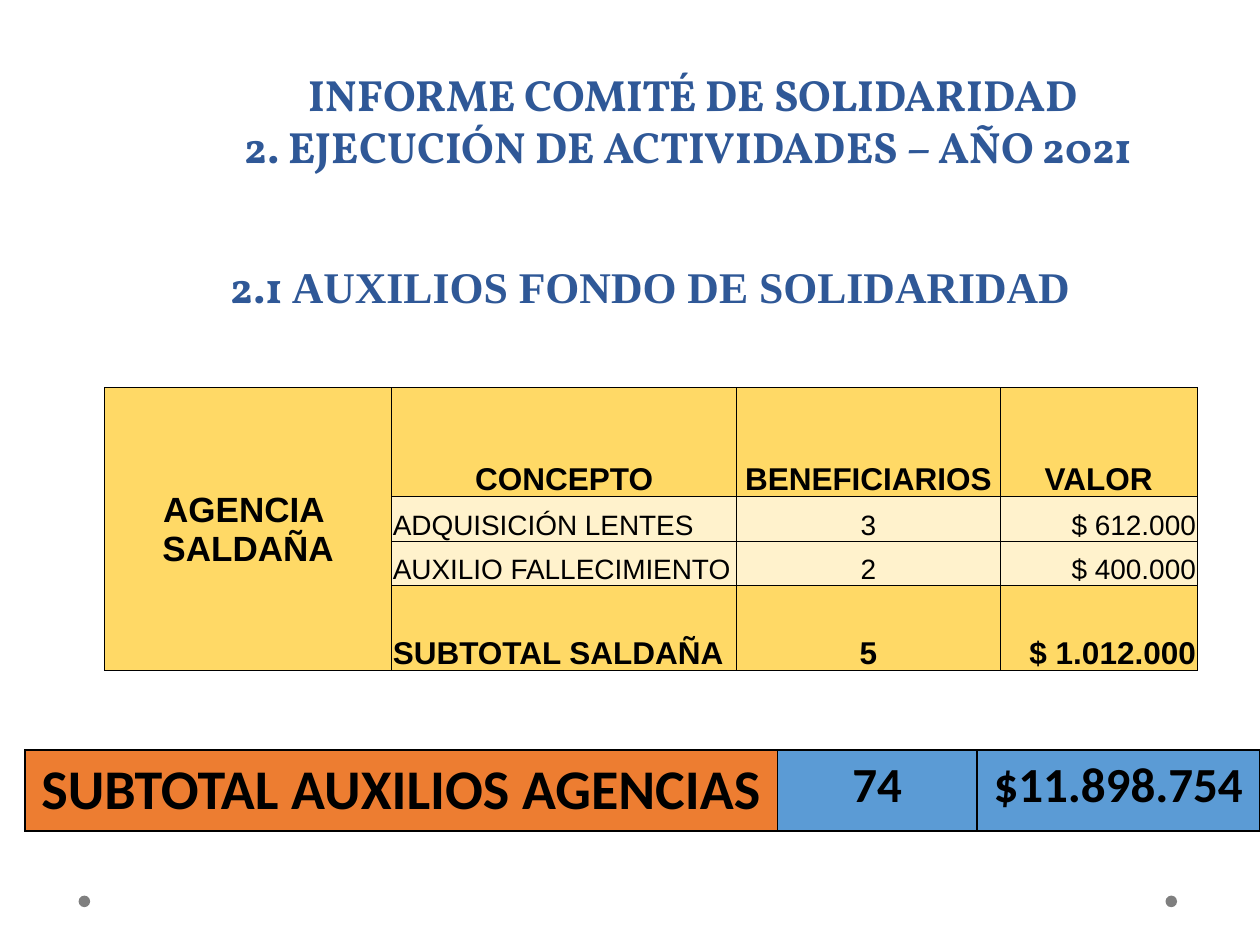
from lxml import etree
from pptx import Presentation
from pptx.dml.color import RGBColor
from pptx.enum.shapes import MSO_SHAPE
from pptx.enum.text import MSO_ANCHOR, PP_ALIGN
from pptx.oxml.ns import qn
from pptx.util import Pt

LEFT, CENTER, RIGHT = PP_ALIGN.LEFT, PP_ALIGN.CENTER, PP_ALIGN.RIGHT
TOP, MIDDLE, BOTTOM = MSO_ANCHOR.TOP, MSO_ANCHOR.MIDDLE, MSO_ANCHOR.BOTTOM
OVAL = MSO_SHAPE.OVAL

COLORS = {
    "heading": "2F5897", "text": "000000", "dot": "7F7F7F",
    "gold": "FFD966", "cream": "FFF2CC", "orange": "ED7D31", "blue": "5B9BD5",
}

TITLE = ["INFORME COMITÉ DE SOLIDARIDAD", "2. EJECUCIÓN DE ACTIVIDADES – AÑO 2021 "]
SUBTITLE = [("2.1 ", "Vollkorn"), ("AUXILIOS FONDO DE SOLIDARIDAD", "Times New Roman")]

AGENCY = ["AGENCIA ", "SALDAÑA"]
# texts, fill, size, bold, alignment of the first column and of the last
AID_ROWS = [
    (["CONCEPTO", "BENEFICIARIOS", "VALOR"], "gold", 18, True, CENTER, CENTER),
    (["ADQUISICIÓN LENTES", "3", "$ 612.000"], "cream", 16, False, LEFT, RIGHT),
    (["AUXILIO FALLECIMIENTO", "2", "$ 400.000"], "cream", 16, False, LEFT, RIGHT),
    (["SUBTOTAL SALDAÑA", "5", "$ 1.012.000"], "gold", 18, True, LEFT, RIGHT),
]
AID_WIDTHS = [164, 197.2, 150.6, 112.5]
AID_HEIGHTS = [62.4, 25.2, 25.5, 45]
AID_MARGINS = [0.7, 0.7, 0.7, 0]

TOTALS = [
    ("SUBTOTAL AUXILIOS AGENCIAS", "orange", 32),
    ("74", "blue", 28),
    ("$11.898.754", "blue", 28),
]
TOTAL_WIDTHS = [430.2, 113.8, 161.6]
TOTAL_HEIGHT = 46.2
TOTAL_MARGINS = [7.2, 7.2, 3.6, 3.6]


def rgb(name):
    return RGBColor.from_string(COLORS[name])


def add_run(p, text, font, size, color, bold=True):
    r = p.add_run()
    r.text = text
    r.font.name, r.font.size, r.font.bold = font, Pt(size), bold
    r.font.color.rgb = rgb(color)


def add_heading(slide, left, top, width, height, anchor):
    """Add an empty heading box and return its centred first paragraph."""
    tf = slide.shapes.add_textbox(Pt(left), Pt(top), Pt(width), Pt(height)).text_frame
    tf.word_wrap = True
    tf.vertical_anchor = anchor
    p = tf.paragraphs[0]
    p.alignment = CENTER
    return p


def add_grid(slide, left, top, widths, heights):
    table = slide.shapes.add_table(
        len(heights), len(widths), Pt(left), Pt(top), Pt(sum(widths)), Pt(sum(heights))
    ).table
    table.first_row = table.horz_banding = False
    for column, width in zip(table.columns, widths):
        column.width = Pt(width)
    for row, height in zip(table.rows, heights):
        row.height = Pt(height)
    return table


def style_cell(cell, fill, margins, anchor, border):
    cell.margin_left, cell.margin_right, cell.margin_top, cell.margin_bottom = map(Pt, margins)
    cell.vertical_anchor = anchor
    tc_pr = cell._tc.get_or_add_tcPr()
    for side in ("a:lnL", "a:lnR", "a:lnT", "a:lnB"):
        ln = etree.SubElement(tc_pr, qn(side), w=str(Pt(border)))
        solid = etree.SubElement(ln, qn("a:solidFill"))
        etree.SubElement(solid, qn("a:srgbClr"), val=COLORS["text"])
    cell.fill.solid()
    cell.fill.fore_color.rgb = rgb(fill)


def write_cell(cell, lines, font, size, bold, align):
    tf = cell.text_frame
    for i, line in enumerate(lines):
        p = tf.add_paragraph() if i else tf.paragraphs[0]
        p.alignment = align
        add_run(p, line, font, size, "text", bold)


def add_aid_table(slide):
    table = add_grid(slide, 59.8, 221.5, AID_WIDTHS, AID_HEIGHTS)
    for i, (texts, fill, size, bold, first, last) in enumerate(AID_ROWS):
        style_cell(table.cell(i, 0), "gold", AID_MARGINS, MIDDLE, 0.5)
        for j, (text, align) in enumerate(zip(texts, (first, CENTER, last)), 1):
            cell = table.cell(i, j)
            style_cell(cell, fill, AID_MARGINS, BOTTOM, 0.5)
            write_cell(cell, [text], "Arial", size, bold, align)
    agency = table.cell(0, 0)
    agency.merge(table.cell(len(AID_ROWS) - 1, 0))
    write_cell(agency, AGENCY, "Arial", 20, True, CENTER)


def add_totals_table(slide):
    table = add_grid(slide, 14.2, 428.6, TOTAL_WIDTHS, [TOTAL_HEIGHT])
    for j, (text, fill, size) in enumerate(TOTALS):
        cell = table.cell(0, j)
        style_cell(cell, fill, TOTAL_MARGINS, TOP, 1)
        write_cell(cell, [text], "Calibri", size, True, CENTER)


def main():
    prs = Presentation()
    prs.slide_width, prs.slide_height = Pt(720), Pt(540)
    slide = prs.slides.add_slide(prs.slide_layouts[6])

    for left in (666, 44.9):
        dot = slide.shapes.add_shape(OVAL, Pt(left), Pt(511.8), Pt(6.6), Pt(6.6))
        dot.shadow.inherit = False
        dot.fill.solid()
        dot.fill.fore_color.rgb = rgb("dot")
        dot.line.fill.background()

    p = add_heading(slide, 72, 0, 648, 102.2, BOTTOM)
    p.line_spacing = Pt(30)
    for i, line in enumerate(TITLE):
        if i:
            p.add_line_break()
        add_run(p, line, "Vollkorn", 25, "heading")

    add_aid_table(slide)
    add_totals_table(slide)

    p = add_heading(slide, 42.5, 154, 658, 19.4, MIDDLE)
    for text, font in SUBTITLE:
        add_run(p, text, font, 25, "heading")

    prs.save("out.pptx")


if __name__ == "__main__":
    main()
